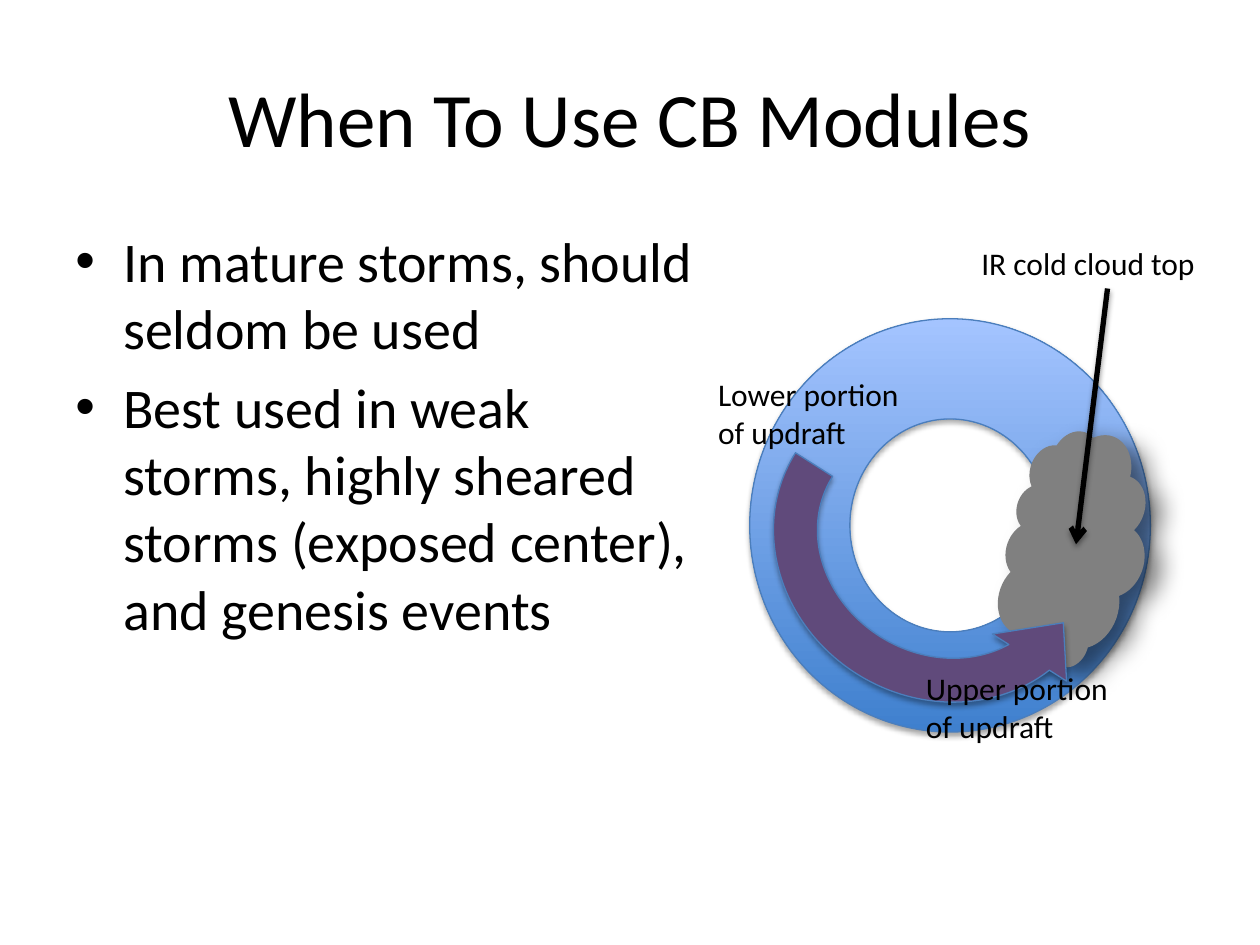
import pptx
import pptx.util
import pptx.dml.color
import pptx.enum.shapes
import pptx.enum.text
import pptx.oxml
import pptx.oxml.ns

Inches = pptx.util.Inches
Pt = pptx.util.Pt
Form = pptx.enum.shapes.MSO_SHAPE
Align = pptx.enum.text.PP_ALIGN
Rgb = pptx.dml.color.RGBColor.from_string
theme = {
    "font": "Calibri", "title": 44, "body": 32, "label": 18,
    "ink": Rgb("000000"), "edge": Rgb("4B7EBC"), "cloud": Rgb("808080"),
    "draft": Rgb("604A7B"), "ring": [Rgb("3F80CE"), Rgb("A4C4FF")],
}

deck = pptx.Presentation()
deck.slide_width = Inches(10)
deck.slide_height = Inches(7.5)
slide = deck.slides.add_slide(deck.slide_layouts[6])
shapes = slide.shapes


def write(box, lines, size, wrap=True):
    frame = shapes.add_textbox(*map(Inches, box)).text_frame
    frame.word_wrap = wrap
    frame.text = "\n".join(lines)
    for para in frame.paragraphs:
        for run in para.runs:
            run.font.name = theme["font"]
            run.font.size = Pt(theme[size])
            run.font.color.rgb = theme["ink"]
    return frame


def shade(shape, alpha, blur, dist, angle):
    shape._element.spPr.append(pptx.oxml.parse_xml(
        f'<a:effectLst {pptx.oxml.ns.nsdecls("a")}>'
        f'<a:outerShdw blurRad="{Pt(blur)}" dist="{Pt(dist)}" dir="{angle * 60000}" '
        f'algn="ctr" rotWithShape="0"><a:srgbClr val="{theme["ink"]}">'
        f'<a:alpha val="{alpha * 1000}"/></a:srgbClr></a:outerShdw></a:effectLst>'))


title = write((0.5, 0.3, 9, 1.25), ["When To Use CB Modules"], "title")
title.vertical_anchor = pptx.enum.text.MSO_ANCHOR.MIDDLE
title.paragraphs[0].alignment = Align.CENTER

body = write((0.5, 1.75, 5.1, 4.95), [
    "In mature storms, should seldom be used",
    "Best used in weak storms, highly sheared storms (exposed center), and genesis events",
], "body")
for para in body.paragraphs:
    para.space_before = Pt(6.4)
    props = para._p.get_or_add_pPr()
    props.set("marL", str(Inches(0.38)))
    props.set("indent", str(-Inches(0.38)))
    for tag in ('buFont typeface="Arial"', 'buChar char="•"'):
        props.append(pptx.oxml.parse_xml(f'<a:{tag} {pptx.oxml.ns.nsdecls("a")}/>'))

ring = shapes.add_shape(Form.DONUT, *map(Inches, (5.95, 2.53, 3.18, 3.28)))
ring.fill.gradient()
ring.fill.gradient_angle = 90
for stop, place, color in zip(ring.fill.gradient_stops, (0, 1), theme["ring"]):
    stop.position = place
    stop.color.rgb = color
ring.line.color.rgb = theme["edge"]
ring.line.width = Pt(0.75)
shade(ring, 35, 3.1, 1.8, 90)

cloud = shapes.add_shape(Form.CLOUD, *map(Inches, (7.58, 3.81, 1.9, 1.11)))
cloud.rotation = 289.5
cloud.fill.solid()
cloud.fill.fore_color.rgb = theme["cloud"]
cloud.line.fill.background()
shade(cloud, 52, 14.2, 11, 33)

write((7.69, 1.89, 1.92, 0.4), ["IR cold cloud top"], "label", False)

arrow = shapes.add_connector(
    pptx.enum.shapes.MSO_CONNECTOR.STRAIGHT, *map(Inches, (8.79, 2.29, 8.54, 4.32)))
arrow.line.color.rgb = theme["ink"]
arrow.line.width = Pt(3)
arrow.line._get_or_add_ln().append(pptx.oxml.parse_xml(
    f'<a:tailEnd type="arrow" {pptx.oxml.ns.nsdecls("a")}/>'))
shade(arrow, 38, 3.1, 1.6, 90)

draft = shapes.add_shape(Form.CIRCULAR_ARROW, *map(Inches, (5.93, 2.92, 3.04, 2.79)))
draft.rotation = 212.4
draft._element.spPr.xfrm.set("flipH", "1")
draft.fill.solid()
draft.fill.fore_color.rgb = theme["draft"]
draft.line.color.rgb = theme["edge"]
draft.line.width = Pt(0.75)
shade(draft, 35, 3.1, 1.8, 90)

for part, left, top in (("Upper", 7.25, 5.26), ("Lower", 5.6, 2.93)):
    write((left, top, 1.65, 0.71), [f"{part} portion", "of updraft"], "label", False)

deck.save("out.pptx")
